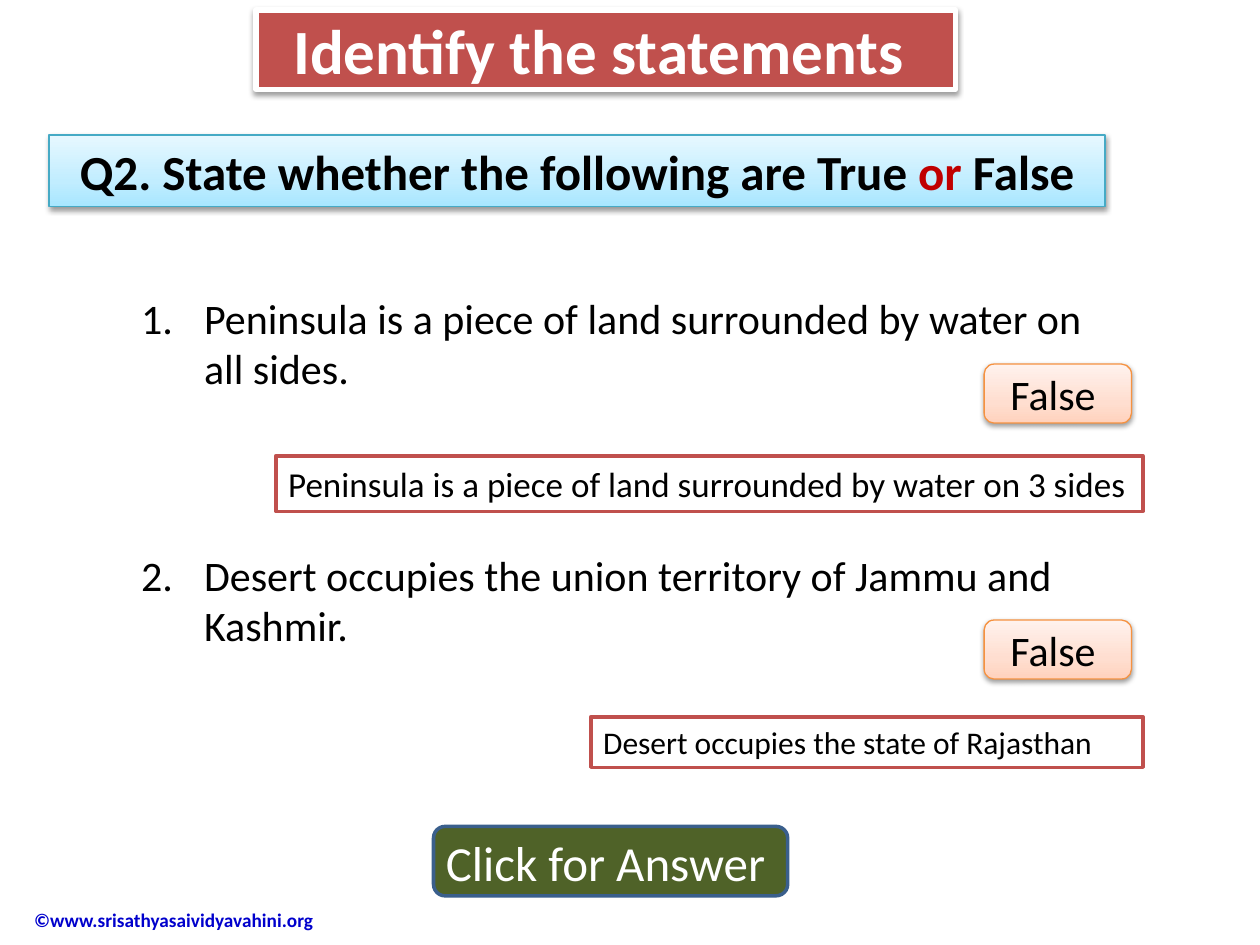
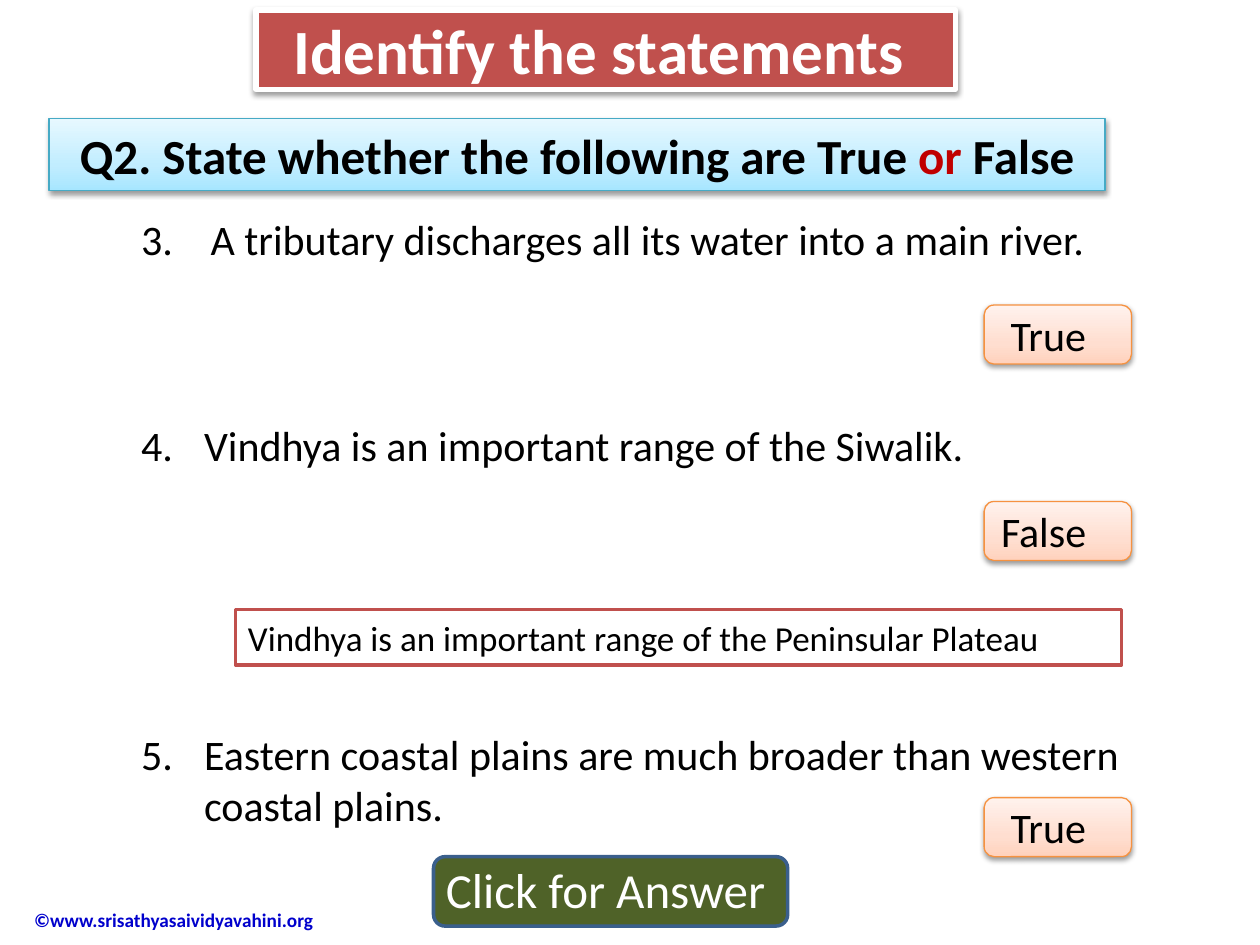
from dataclasses import dataclass
from typing import Optional

from lxml import etree
from pptx import Presentation
from pptx import util as u
from pptx.dml.color import RGBColor
from pptx.enum import shapes, text
from pptx.oxml import ns

FONT = "Calibri"
BLACK = RGBColor(0x00, 0x00, 0x00)
WHITE = RGBColor(0xFF, 0xFF, 0xFF)
RED = RGBColor(0xC0, 0x50, 0x4D)
DARK_RED = RGBColor(0xC0, 0x00, 0x00)
GREEN = RGBColor(0x4F, 0x62, 0x28)
NAVY = RGBColor(0x3A, 0x5F, 0x8C)
LINK_BLUE = RGBColor(0x00, 0x00, 0xCC)
TEAL = RGBColor(0x46, 0xAA, 0xC5)
ORANGE = RGBColor(0xF6, 0x92, 0x40)
BLUE_STOPS = (RGBColor(0xA7, 0xE6, 0xFF), RGBColor(0xC1, 0xED, 0xFF), RGBColor(0xE7, 0xF8, 0xFF))
PEACH_STOPS = (RGBColor(0xFF, 0xD2, 0xBD), RGBColor(0xFF, 0xDE, 0xD0), RGBColor(0xFF, 0xF2, 0xED))
STOP_POSITIONS = (0, 35000, 100000)

RECT = shapes.MSO_SHAPE.RECTANGLE
ROUND = shapes.MSO_SHAPE.ROUNDED_RECTANGLE
CENTER = text.PP_ALIGN.CENTER
LEFT = text.PP_ALIGN.LEFT
PARAGRAPH_GAP = 30
ROW_GAP = 59


@dataclass(frozen=True)
class Area:
    left: float
    top: float
    width: float
    height: float


@dataclass(frozen=True)
class Statement:
    number: int
    wording: str
    rows_above: int = 0
    indent: float = 1.27


@dataclass(frozen=True)
class Verdict:
    wording: str
    top: float
    right_inset: float


@dataclass(frozen=True)
class Correction:
    wording: str
    area: Area
    size: int = 20


@dataclass(frozen=True)
class Quiz:
    question_top: float
    list_area: Area
    button_top: float
    label_area: Area
    statements: tuple[Statement, ...]
    verdicts: tuple[Verdict, ...]
    corrections: tuple[Correction, ...]


QUIZZES = (
    Quiz(
        2.72, Area(2.59, 5.77, 20.45, 8.71), 16.66, Area(8.74, 16.66, 7.75, 1.45),
        (
            Statement(1, "Peninsula is a piece of land surrounded by water on all sides."),
            Statement(2, "Desert occupies the union territory of Jammu and Kashmir.", 1),
        ),
        (Verdict("False", 7.34, 0.19), Verdict("False", 12.5, 0.19)),
        (
            Correction("Peninsula is a piece of land surrounded by water on 3 sides",
                       Area(5.56, 9.19, 17.48, 1.12)),
            Correction("Desert occupies the state of Rajasthan",
                       Area(11.91, 14.45, 11.13, 1.02), 18),
        ),
    ),
    Quiz(
        2.39, Area(2.59, 4.17, 20.45, 14.73), 17.27, Area(8.74, 17.2, 7.14, 1.45),
        (
            Statement(3, "A tributary discharges all its water into a main river.", indent=1.4),
            Statement(4, "Vindhya is an important range of the Siwalik.", 1),
            Statement(5, "Eastern coastal plains are much broader than western coastal plains.", 2),
        ),
        (Verdict("True", 6.15, 0.38), Verdict("True", 16.08, 0.38), Verdict("False", 10.11, 0.57)),
        (Correction("Vindhya is an important range of the Peninsular Plateau",
                    Area(4.75, 12.29, 17.86, 1.12)),),
    ),
)


def place(shape, area: Area) -> None:
    shape.left, shape.top = u.Cm(area.left), u.Cm(area.top)
    shape.width, shape.height = u.Cm(area.width), u.Cm(area.height)


def style_para(para, size: int, color: RGBColor = BLACK, bold: bool = False,
               align: text.PP_ALIGN = LEFT) -> None:
    para.alignment = align
    para.font.name = FONT
    para.font.size = u.Pt(size)
    para.font.bold = bold
    para.font.color.rgb = color


def write(shape, wording: str, size: int, color: RGBColor = BLACK, bold: bool = False,
          align: text.PP_ALIGN = LEFT) -> None:
    shape.text_frame.word_wrap = True
    para = shape.text_frame.paragraphs[0]
    para.text = wording
    style_para(para, size, color, bold, align)


def outline(shape, color: RGBColor, width: float) -> None:
    shape.line.color.rgb = color
    shape.line.width = u.Pt(width)


def add_panel(page, kind: shapes.MSO_SHAPE, area: Area, fill: Optional[RGBColor],
              line: RGBColor, width: float):
    panel = page.shapes.add_shape(kind, *map(u.Cm, (area.left, area.top, area.width, area.height)))
    panel.shadow.inherit = False
    if fill is not None:
        panel.fill.solid()
        panel.fill.fore_color.rgb = fill
    outline(panel, line, width)
    return panel


def add_label(page, area: Area):
    return page.shapes.add_textbox(*map(u.Cm, (area.left, area.top, area.width, area.height)))


def add_color(parent, color: RGBColor):
    return etree.SubElement(parent, ns.qn("a:srgbClr"), val=str(color))


def shade(shape, stops: tuple[RGBColor, ...]) -> None:
    shape.fill.gradient()
    shape.fill.gradient_angle = 90
    stop_list = shape.element.spPr.find(".//" + ns.qn("a:gsLst"))
    for stop in list(stop_list):
        stop_list.remove(stop)
    for position, color in zip(STOP_POSITIONS, stops):
        add_color(etree.SubElement(stop_list, ns.qn("a:gs"), pos=str(position)), color)


def cast_shadow(shape) -> None:
    shape.shadow.inherit = False
    effects = shape.element.spPr.find(ns.qn("a:effectLst"))
    shadow = etree.SubElement(effects, ns.qn("a:outerShdw"), blurRad=str(u.Pt(3.1)),
                              dist=str(u.Pt(1.6)), dir="5400000", rotWithShape="0")
    etree.SubElement(add_color(shadow, BLACK), ns.qn("a:alpha"), val="38000")


def format_title(title) -> None:
    place(title, Area(5.16, 0.2, 14.1, 1.6))
    geometry = etree.SubElement(title.element.spPr, ns.qn("a:prstGeom"), prst="roundRect")
    etree.SubElement(geometry, ns.qn("a:avLst"))
    title.fill.solid()
    title.fill.fore_color.rgb = RED
    outline(title, WHITE, 3)
    cast_shadow(title)
    frame = title.text_frame
    frame.auto_size = text.MSO_AUTO_SIZE.NONE
    frame.vertical_anchor = text.MSO_ANCHOR.MIDDLE
    frame.margin_right = u.Cm(0.54)
    write(title, "Identify the statements", 36, WHITE, True, CENTER)


def fill_statements(body, area: Area, statements: tuple[Statement, ...]) -> None:
    place(body, area)
    frame = body.text_frame
    frame.word_wrap = True
    frame.auto_size = text.MSO_AUTO_SIZE.NONE
    frame.vertical_anchor = text.MSO_ANCHOR.TOP
    for index, statement in enumerate(statements):
        para = frame.add_paragraph() if index else frame.paragraphs[0]
        para.text = statement.wording
        properties = para._p.get_or_add_pPr()
        properties.set("marL", str(u.Cm(statement.indent)))
        properties.set("indent", str(-u.Cm(statement.indent)))
        etree.SubElement(properties, ns.qn("a:buFont"), typeface="+mj-lt")
        etree.SubElement(properties, ns.qn("a:buAutoNum"), type="arabicPeriod",
                         startAt=str(statement.number))
        gap = PARAGRAPH_GAP + ROW_GAP * statement.rows_above if index else 0
        para.space_before = u.Pt(gap)
        style_para(para, 24)


def add_question(page, top: float) -> None:
    band = add_panel(page, RECT, Area(0.99, top, 21.29, 1.45), None, TEAL, 0.75)
    shade(band, BLUE_STOPS)
    cast_shadow(band)
    band.text_frame.word_wrap = True
    para = band.text_frame.paragraphs[0]
    style_para(para, 28, bold=True, align=CENTER)
    for wording, color in (("Q2. State whether the following are True ", BLACK),
                           ("or", DARK_RED), (" False", BLACK)):
        span = para.add_run()
        span.text = wording
        span.font.color.rgb = color


def add_verdict(page, verdict: Verdict) -> None:
    badge = add_panel(page, ROUND, Area(19.84, verdict.top, 2.97, 1.19), None, ORANGE, 0.75)
    shade(badge, PEACH_STOPS)
    cast_shadow(badge)
    badge.text_frame.margin_left = 0
    badge.text_frame.margin_right = u.Cm(verdict.right_inset)
    write(badge, verdict.wording, 24, align=CENTER)


def add_correction(page, correction: Correction) -> None:
    box = add_panel(page, RECT, correction.area, WHITE, RED, 2)
    write(box, correction.wording, correction.size)


def add_button(page, quiz: Quiz) -> None:
    add_panel(page, ROUND, Area(8.74, quiz.button_top, 7.14, 1.4), GREEN, NAVY, 2)
    write(add_label(page, quiz.label_area), "Click for Answer", 28, WHITE)


def share_footer(page) -> None:
    footer = add_label(page, Area(0, 18.03, 6.83, 1.04))
    footer.text_frame.margin_left = u.Cm(0.69)
    footer.text_frame.vertical_anchor = text.MSO_ANCHOR.MIDDLE
    write(footer, "©www.srisathyasaividyavahini.org", 11, LINK_BLUE, True)
    page.slide_layout.shapes.element.append(footer.element)


def add_quiz(deck, quiz: Quiz):
    page = deck.slides.add_slide(deck.slide_layouts[1])
    format_title(page.shapes.title)
    fill_statements(page.placeholders[1], quiz.list_area, quiz.statements)
    add_question(page, quiz.question_top)
    add_button(page, quiz)
    for verdict in quiz.verdicts:
        add_verdict(page, verdict)
    for correction in quiz.corrections:
        add_correction(page, correction)
    return page


def main() -> None:
    deck = Presentation()
    deck.slide_width, deck.slide_height = u.Cm(25.4), u.Cm(19.05)
    pages = [add_quiz(deck, quiz) for quiz in QUIZZES]
    share_footer(pages[0])
    deck.save("out.pptx")


if __name__ == "__main__":
    main()
